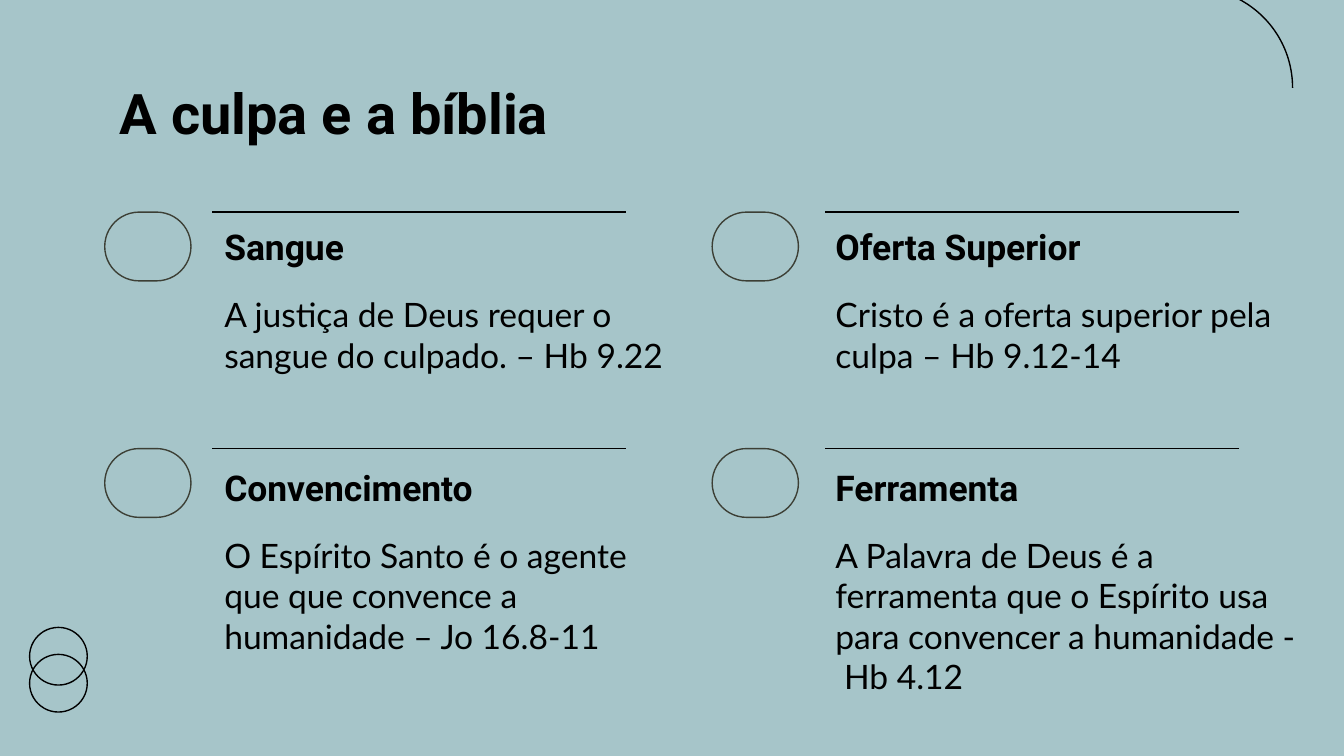
import pptx
import pptx.dml.color
import pptx.enum.shapes
import pptx.enum.text
import pptx.oxml.ns
import pptx.util
import lxml.etree

Cm, Pt = pptx.util.Cm, pptx.util.Pt
KIND = pptx.enum.shapes.MSO_SHAPE
ANCHOR = pptx.enum.text.MSO_ANCHOR

TITLE = "A culpa e a bíblia"
TOPICS = [  # rows of (heading, body)
    [("Sangue", "A justiça de Deus requer o sangue do culpado. – Hb 9.22"),
     ("Oferta Superior", "Cristo é a oferta superior pela culpa – Hb 9.12-14")],
    [("Convencimento", "O Espírito Santo é o agente que que convence a humanidade – Jo 16.8-11"),
     ("Ferramenta", "A Palavra de Deus é a ferramenta que o Espírito usa para convencer a humanidade -  Hb 4.12")],
]

HEX = {"back": "A6C5C9", "ink": "000000", "badge": "3C3F35"}
FONTS = {
    "title": {"name": "Roboto", "size": Pt(30), "bold": True},
    "head": {"name": "Roboto", "size": Pt(19), "bold": True},
    "body": {"name": "Lato", "size": Pt(18), "bold": False},
}
FRAME = {"word_wrap": True, **{"margin_" + side: Cm(0.25) for side in ("left", "top", "right", "bottom")}}

# Lengths in cm
COLS = [{"badge": 1.98, "text": 3.99, "rule": 4.01},
        {"badge": 13.46, "text": 15.54, "rule": 15.6}]
ROWS = [{"rule": 4.01, "text": 4.01}, {"rule": 8.48, "text": 8.56}]
RULE_W = 7.82
BADGE_W, BADGE_H = 1.63, 1.3
HEAD_W, HEAD_H = 7.87, 1.3
BODY_W, BODY_H = 9.27, 2.95
ARC = (20.65, -0.23, 3.78, 3.78)
RING, RING_X, RING_TOPS = 1.09, 0.56, (11.86, 12.37)


def rgb(key):
    return pptx.dml.color.RGBColor.from_string(HEX[key])


def ink(line, key="ink"):
    line.color.rgb = rgb(key)
    line.width = Pt(0.75)


def outline(kind, box, key="ink"):
    shape = slide.shapes.add_shape(kind, *map(Cm, box))
    shape.shadow.inherit = False
    shape.fill.background()
    ink(shape.line, key)
    return shape


def rule(left, top):
    line = slide.shapes.add_connector(
        pptx.enum.shapes.MSO_CONNECTOR.STRAIGHT,
        Cm(left + RULE_W), Cm(top), Cm(left), Cm(top))
    ink(line.line)
    lxml.etree.SubElement(line._element.spPr, pptx.oxml.ns.qn("a:effectLst"))


def write(text, box, style, anchor=ANCHOR.TOP):
    frame = slide.shapes.add_textbox(*map(Cm, box)).text_frame
    for name, value in FRAME.items():
        setattr(frame, name, value)
    frame.vertical_anchor = anchor
    run = frame.paragraphs[0].add_run()
    run.text = text
    for name, value in FONTS[style].items():
        setattr(run.font, name, value)
    run.font.color.rgb = rgb("ink")


deck = pptx.Presentation()
deck.slide_width, deck.slide_height = Cm(25.4), Cm(14.29)
slide = deck.slides.add_slide(deck.slide_layouts[6])
slide.background.fill.solid()
slide.background.fill.fore_color.rgb = rgb("back")

outline(KIND.ARC, ARC)
for top in RING_TOPS:
    outline(KIND.OVAL, (RING_X, top, RING, RING))

write(TITLE, (2.01, 1.24, 21.41, 1.6), "title")
for row, topics in zip(ROWS, TOPICS):
    for col, (head, body) in zip(COLS, topics):
        left, top = col["text"], row["text"]
        write(head, (left, top, HEAD_W, HEAD_H), "head", ANCHOR.BOTTOM)
        write(body, (left, top + HEAD_H, BODY_W, BODY_H), "body")
        rule(col["rule"], row["rule"])
        badge = outline(KIND.ROUNDED_RECTANGLE,
                        (col["badge"], row["rule"], BADGE_W, BADGE_H), "badge")
        badge.adjustments[0] = 0.5

deck.save("out.pptx")
